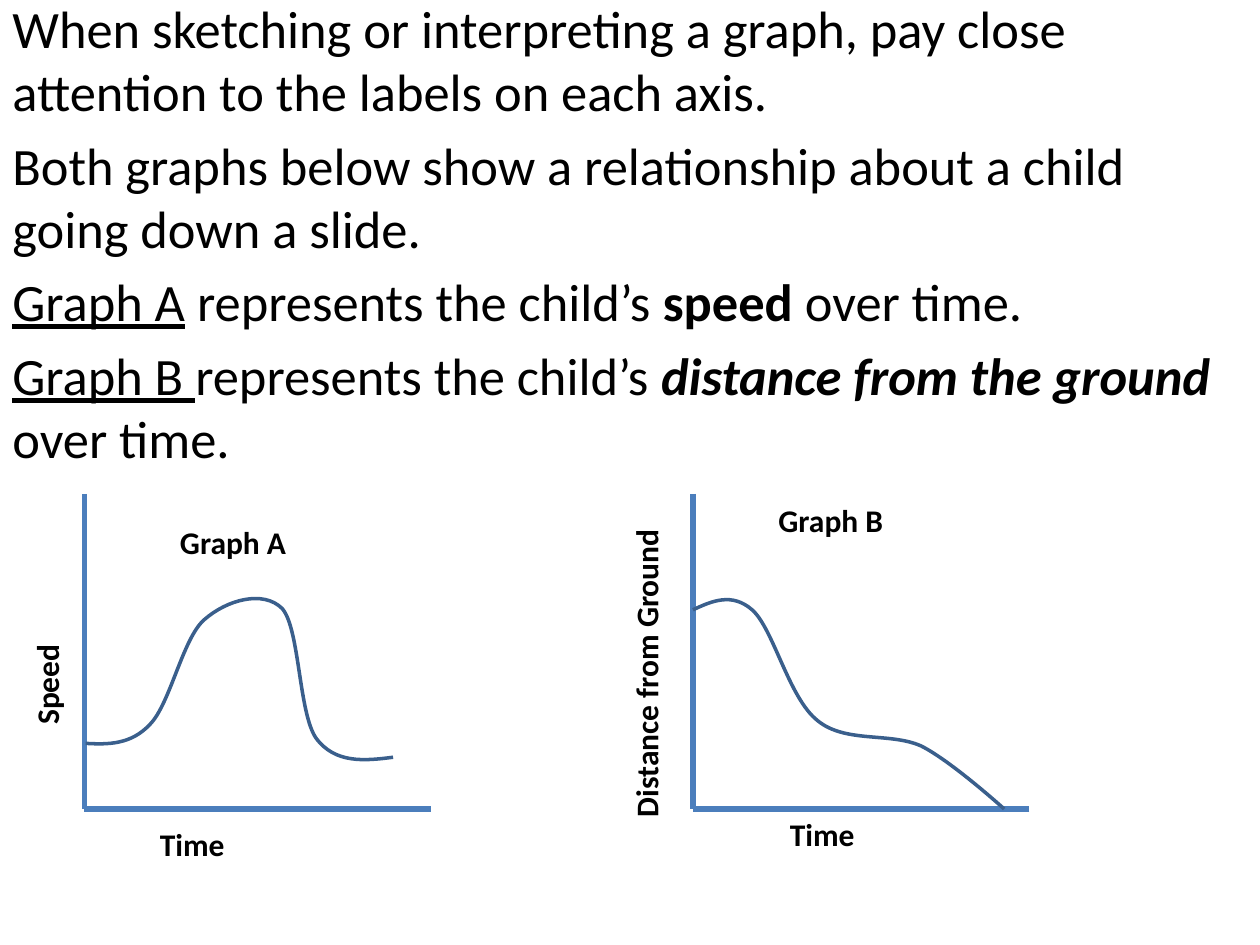
"""Slide comparing a speed graph and a height graph of a child on a slide."""
from lxml.etree import SubElement
from pptx import Presentation
from pptx.dml.color import RGBColor
from pptx.enum.shapes import MSO_CONNECTOR as CONN
from pptx.enum.text import MSO_AUTO_SIZE as AUTO
from pptx.oxml.ns import qn
from pptx.util import Inches, Pt

BLACK = RGBColor(0x00, 0x00, 0x00)
AXIS = RGBColor(0x4B, 0x7E, 0xBC)
CURVE = RGBColor(0x3A, 0x5F, 0x8C)
FONT = "Calibri"

UNDER = {"underline": True}
BOLD = {"bold": True}
BOLD_ITALIC = {"bold": True, "italic": True}

INTRO = [
    [("When sketching or interpreting a graph, pay close attention to the labels on each axis.", {})],
    [("Both graphs below show a relationship about a child going down a slide.", {})],
    [("Graph A", UNDER), (" represents the child’s ", {}), ("speed", BOLD), (" over time.", {})],
    [("Graph B ", UNDER), ("represents the child’s ", {}),
     ("distance from the ground", BOLD_ITALIC), (" over time.", {})],
]

AXIS_TOP, AXIS_BASE = 3.92, 6.42
LABEL_H = 0.4
GRAPHS = [
    {
        "left": 0.67, "right": 3.42,
        "labels": [("Speed", -0.05, 5.23, 0.84, 270),
                   ("Time", 1.17, 6.5, 0.72, 0),
                   ("Graph A", 1.33, 4.1, 1.05, 0)],
        "curve": [(0.68, 5.9),
                  (0.86, 5.91), (1.04, 5.91), (1.19, 5.75),
                  (1.35, 5.59), (1.45, 5.07), (1.62, 4.92),
                  (1.8, 4.76), (2.09, 4.68), (2.24, 4.83),
                  (2.38, 4.99), (2.37, 5.66), (2.51, 5.86),
                  (2.66, 6.06), (2.89, 6.04), (3.12, 6.01)],
    },
    {
        "left": 5.5, "right": 8.17,
        "labels": [("Distance from Ground", 3.87, 5.13, 2.51, 270),
                   ("Time", 6.17, 6.42, 0.72, 0),
                   ("Graph B", 6.08, 3.93, 1.04, 0)],
        "curve": [(5.5, 4.84),
                  (5.65, 4.77), (5.81, 4.7), (5.97, 4.84),
                  (6.14, 4.99), (6.26, 5.54), (6.49, 5.72),
                  (6.71, 5.9), (7.06, 5.81), (7.31, 5.92),
                  (7.55, 6.04), (7.97, 6.42), (7.97, 6.42)],
    },
]


def add_run(p, text, size, style):
    r = p.add_run()
    r.text = text
    r.font.color.rgb = BLACK
    for name, value in {"name": FONT, "size": Pt(size), **style}.items():
        setattr(r.font, name, value)


def add_intro(s):
    tf = s.shapes.add_textbox(Inches(0), Inches(-0.08), Inches(10), Inches(6.03)).text_frame
    tf.word_wrap = True
    for i, runs in enumerate(INTRO):
        p = tf.add_paragraph() if i else tf.paragraphs[0]
        p.space_before = Pt(6)
        for text, style in runs:
            add_run(p, text, 30, style)


def add_label(s, text, left, top, width, rotation):
    box = s.shapes.add_textbox(Inches(left), Inches(top), Inches(width), Inches(LABEL_H))
    box.rotation = rotation
    tf = box.text_frame
    tf.word_wrap = False
    tf.auto_size = AUTO.SHAPE_TO_FIT_TEXT
    add_run(tf.paragraphs[0], text, 18, BOLD)


def add_axis(s, x1, y1, x2, y2):
    line = s.shapes.add_connector(CONN.STRAIGHT, *map(Inches, (x1, y1, x2, y2)))
    line.line.color.rgb = AXIS
    line.line.width = Pt(3)
    SubElement(line._element.spPr, qn("a:effectLst"))


def add_curve(s, points):
    """Draw a Bezier curve: a start, then triples of two controls and an end."""
    start, *rest = [(Inches(x), Inches(y)) for x, y in points]
    builder = s.shapes.build_freeform(*start)
    builder.add_line_segments(rest, close=False)
    sp = builder.convert_to_shape()
    sp.shadow.inherit = False
    sp.fill.background()
    sp.line.color.rgb = CURVE
    sp.line.width = Pt(2)
    outline = next(sp._element.iter(qn("a:path")))
    segments = outline.findall(qn("a:lnTo"))
    for i in range(0, len(segments), 3):
        bezier = SubElement(outline, qn("a:cubicBezTo"))
        for segment in segments[i:i + 3]:
            bezier.append(segment[0])
            outline.remove(segment)


def main():
    prs = Presentation()
    prs.slide_width, prs.slide_height = Inches(10), Inches(7.5)
    s = prs.slides.add_slide(prs.slide_layouts[6])
    add_intro(s)
    for graph in GRAPHS:
        left = graph["left"]
        add_axis(s, left, AXIS_TOP, left, AXIS_BASE)
        add_axis(s, graph["right"], AXIS_BASE, left, AXIS_BASE)
        for label in graph["labels"]:
            add_label(s, *label)
        add_curve(s, graph["curve"])
    prs.save("out.pptx")


if __name__ == "__main__":
    main()
